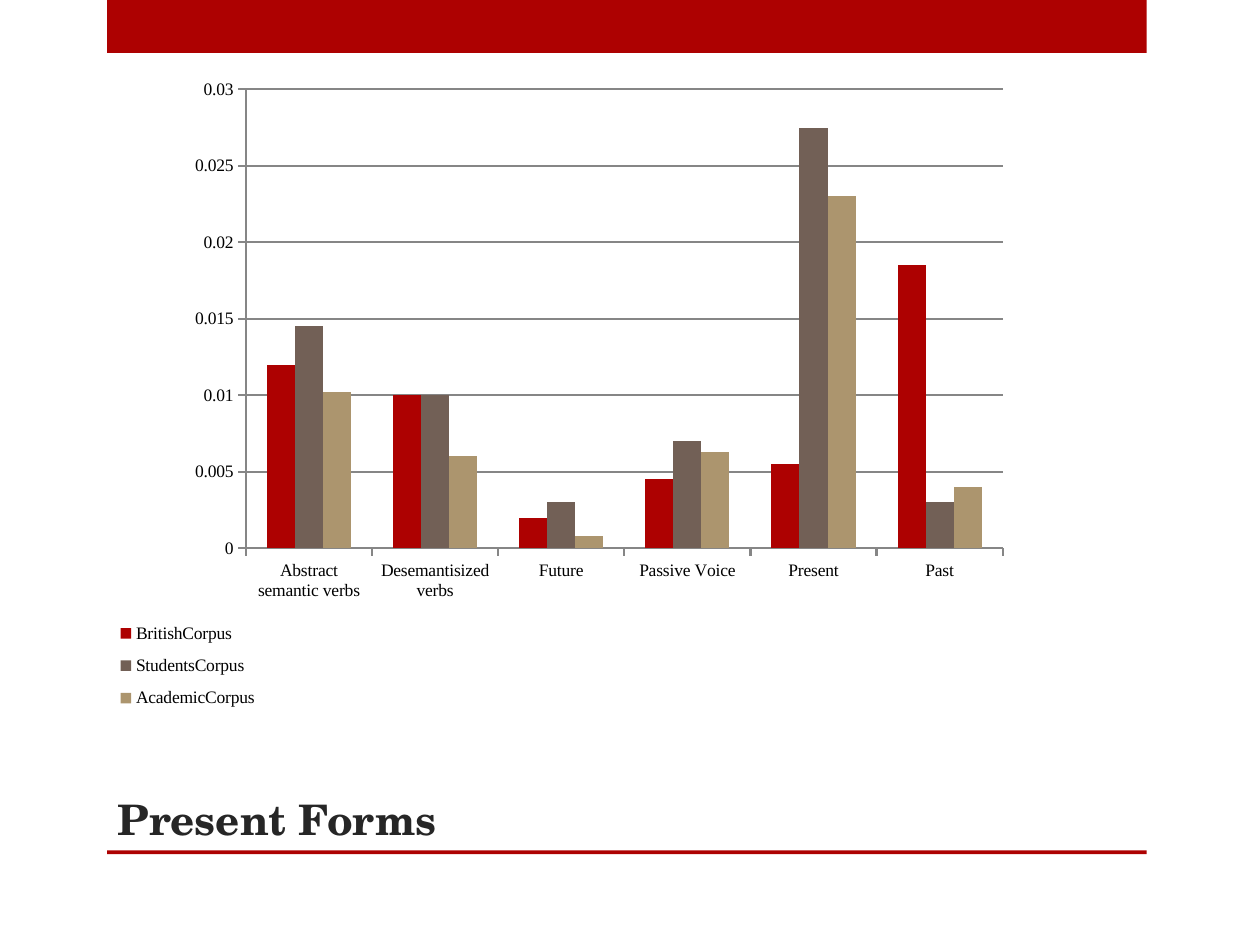
from lxml import etree
from pptx import Presentation
from pptx import util as u
from pptx.chart.data import CategoryChartData
from pptx.dml.color import RGBColor
from pptx.enum import chart as charts, shapes, text
from pptx.oxml import parse_xml
from pptx.oxml.ns import nsdecls, qn

COLORS = {"red": "AD0101", "brown": "726056", "tan": "AC956E",
          "ink": "262626", "black": "000000", "grid": "868686"}
CATEGORIES = ["Abstract semantic verbs", "Desemantisized verbs", "Future",
              "Passive Voice", "Present", "Past"]
SERIES = [
    ("BritishCorpus", "red", [0.012, 0.01, 0.002, 0.0045, 0.0055, 0.0185]),
    ("StudentsCorpus", "brown", [0.0145, 0.01, 0.003, 0.007, 0.0275, 0.003]),
    ("AcademicCorpus", "tan", [0.0102, 0.006, 0.0008, 0.0063, 0.023, 0.004]),
]
PLOT_SHARES = (0.162, 0.051, 0.675, 0.69)
LEGEND_SHARES = (0.04, 0.835, 0.14, 0.185)


def color(name):
    return RGBColor.from_string(COLORS[name])


def inches(box):
    return [u.Inches(length) for length in box]


def add_band(page, box):
    band = page.shapes.add_shape(shapes.MSO_SHAPE.RECTANGLE, *inches(box))
    band.shadow.inherit = False
    band.fill.solid()
    band.fill.fore_color.rgb = color("red")
    band.line.fill.background()


def place_title(page, box, wording):
    title = page.shapes.title
    title.left, title.top, title.width, title.height = inches(box)
    frame = title.text_frame
    frame.text = wording
    frame.word_wrap = True
    frame.auto_size = text.MSO_AUTO_SIZE.NONE
    frame.vertical_anchor = text.MSO_ANCHOR.BOTTOM
    para = frame.paragraphs[0]
    para.alignment = text.PP_ALIGN.LEFT
    para.font.name = "TeX Gyre Schola"
    para.font.size = u.Pt(24)
    para.font.bold = True
    para.font.color.rgb = color("ink")


def set_layout(part, shares, inner=False):
    """Fix a chart part at shares (left, top, width, height) of the chart."""
    for old in part.findall(qn("c:layout")):
        part.remove(old)
    layout = parse_xml(f"<c:layout {nsdecls('c')}><c:manualLayout/></c:layout>")
    settings = [("layoutTarget", "inner")] if inner else []
    settings += [("xMode", "edge"), ("yMode", "edge"), *zip("xywh", shares)]
    for tag, value in settings:
        etree.SubElement(layout[0], qn(f"c:{tag}")).set("val", str(value))
    before = part.find(qn("c:legendPos"))
    part.insert(0 if before is None else part.index(before) + 1, layout)


def style_line(line):
    line.color.rgb = color("grid")
    line.width = u.Pt(1.25)


def add_corpus_chart(page, box):
    data = CategoryChartData()
    data.categories = CATEGORIES
    for name, _, values in SERIES:
        data.add_series(name, values)
    chart = page.shapes.add_chart(
        charts.XL_CHART_TYPE.COLUMN_CLUSTERED, *inches(box), data).chart
    chart.has_title = False
    chart.font.name = "Times New Roman"
    chart.font.size = u.Pt(10)
    chart.font.color.rgb = color("black")

    plot = chart.plots[0]
    plot.gap_width = 150
    plot.overlap = 0
    plot.vary_by_categories = False
    for series, (_, shade, _) in zip(plot.series, SERIES):
        series.format.fill.solid()
        series.format.fill.fore_color.rgb = color(shade)

    for axis in (chart.category_axis, chart.value_axis):
        axis.major_tick_mark = charts.XL_TICK_MARK.OUTSIDE
        style_line(axis.format.line)
    scale = chart.value_axis
    scale.minimum_scale, scale.maximum_scale, scale.major_unit = 0, 0.03, 0.005
    scale.has_major_gridlines = True
    style_line(scale.major_gridlines.format.line)

    chart.has_legend = True
    chart.legend.position = charts.XL_LEGEND_POSITION.RIGHT
    chart.legend.include_in_layout = False
    set_layout(plot._element.getparent(), PLOT_SHARES, inner=True)
    set_layout(chart.legend._element, LEGEND_SHARES)


def main():
    deck = Presentation()
    deck.slide_width, deck.slide_height = inches((10, 7.5))
    page = deck.slides.add_slide(deck.slide_layouts[5])
    left, width = 0.85, 8.25
    add_band(page, (left, 0, width, 0.42))
    add_band(page, (left, 6.75, width, 0.03))
    place_title(page, (0.83, 6.27, 7.42, 0.48), "Present Forms")
    add_corpus_chart(page, (0.51, 0.44, 8.9, 5.28))
    deck.save("out.pptx")


if __name__ == "__main__":
    main()
